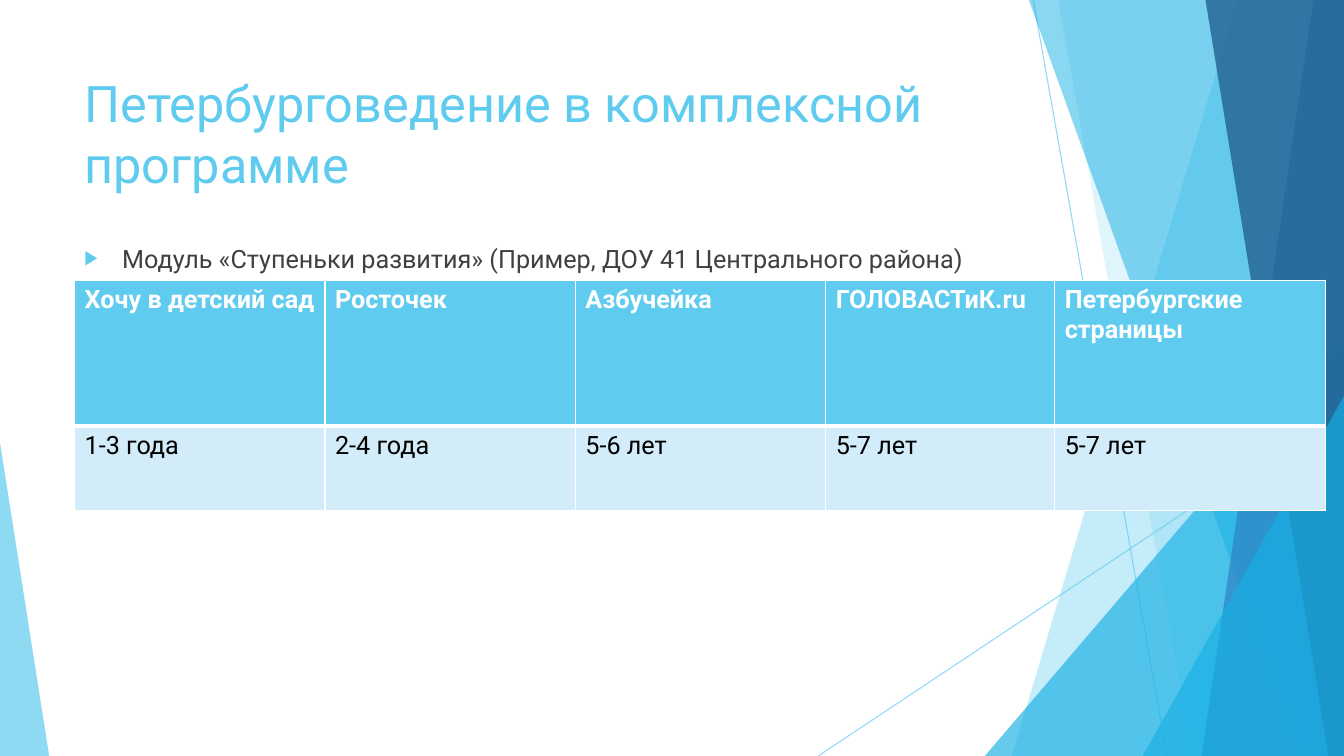
from lxml import etree
from pptx import Presentation, util as u
from pptx.dml.color import RGBColor
from pptx.enum import shapes as shp, text as txt
from pptx.oxml import ns

FONT = "Roboto"
SKY, AZURE, BLUE, NAVY = "5FCBEF", "17B0E4", "2E83C3", "226292"
WHITE, BLACK, GREY, PALE = "FFFFFF", "000000", "404040", "D2ECF9"
SLIDE_W, SLIDE_H = 33.87, 19.05

HEADING = "Петербурговедение в комплексной программе"
MODULE = "Модуль «Ступеньки развития» (Пример, ДОУ 41 Центрального района)"
PROGRAMMES = [
    ("Хочу в детский сад", "1-3 года"),
    ("Росточек", "2-4 года"),
    ("Азбучейка", "5-6 лет"),
    ("ГОЛОВАСТиК.ru", "5-7 лет"),
    ("Петербургские страницы", "5-7 лет"),
]
PROGRAMME_WIDTHS = [6.31, 6.31, 6.31, 5.77, 6.83]
ROW_HEIGHTS = [3.68, 2.13]


def colour(hex_value):
    return RGBColor.from_string(hex_value)


def sub(parent, tag, **attributes):
    return etree.SubElement(parent, ns.qn(tag), attributes)


def set_alpha(element, percent):
    for shade in element.iter(ns.qn("a:srgbClr")):
        sub(shade, "a:alpha", val=str(percent * 1000))


def add_run(paragraph, words, size, hex_value, bold=False):
    run = paragraph.add_run()
    run.text = words
    run.font.name = FONT
    run.font.size = u.Pt(size)
    run.font.bold = bold
    run.font.color.rgb = colour(hex_value)


def place(shape, left, top, width, height):
    shape.left, shape.top = u.Cm(left), u.Cm(top)
    shape.width, shape.height = u.Cm(width), u.Cm(height)


def paint(shape, hex_value, opacity):
    shape.shadow.inherit = False
    shape.fill.solid()
    shape.fill.fore_color.rgb = colour(hex_value)
    shape.line.fill.background()
    set_alpha(shape._element.spPr, opacity)


def add_ray(slide, x1, y1, x2, y2):
    ray = slide.shapes.add_connector(
        shp.MSO_CONNECTOR.STRAIGHT, u.Cm(x1), u.Cm(y1), u.Cm(x2), u.Cm(y2))
    ray.line.color.rgb = colour(SKY)
    ray.line.width = u.Pt(0.75)
    set_alpha(ray._element.spPr, 70)
    sub(ray._element.spPr, "a:effectLst")


def add_wedge(slide, left, top, width, height, apex, hex_value, opacity):
    wedge = slide.shapes.add_shape(
        shp.MSO_SHAPE.ISOSCELES_TRIANGLE,
        u.Cm(left), u.Cm(top), u.Cm(width), u.Cm(height))
    wedge.adjustments[0] = apex
    paint(wedge, hex_value, opacity)


def add_panel(slide, top_x, bottom_x, top, right, bottom, hex_value, opacity):
    corners = [(top_x, top), (right, top), (right, bottom), (bottom_x, bottom)]
    # Vertices are whole hundredths of a centimetre
    points = [(round(x * 100), round(y * 100)) for x, y in corners]
    outline = slide.shapes.build_freeform(*points[0], scale=u.Cm(0.01))
    outline.add_line_segments(points[1:], close=True)
    paint(outline.convert_to_shape(), hex_value, opacity)


def right_fan(slide, left, top, width, height):
    right, bottom = left + width, top + height

    # Thin crossing rays
    add_ray(slide, left + 5.42, top, left + 8.79, bottom)
    add_ray(slide, right, top + 10.24, left, bottom)

    def panel(top_x, bottom_x, hex_value, opacity):
        add_panel(slide, left + top_x, left + bottom_x,
                  top, right, bottom, hex_value, opacity)

    def wedge(x, y):
        add_wedge(slide, left + x, top + y, width - x, height - y, 1, AZURE, 66)

    # Translucent panels and wedges, back to front
    panel(10.57, 4.88, SKY, 36)
    panel(6.05, 9.43, SKY, 20)
    wedge(4.2, 8.46)
    panel(5.31, 12.17, AZURE, 50)
    panel(12.48, 9.66, BLUE, 70)
    panel(9.76, 12.86, NAVY, 80)
    wedge(8.18, 9.98)


def heading(slide, left, top, width, height):
    title = slide.shapes.title
    place(title, left, top, width, height)
    frame = title.text_frame
    frame.word_wrap = True
    frame.auto_size = txt.MSO_AUTO_SIZE.NONE
    frame.vertical_anchor = txt.MSO_ANCHOR.TOP
    paragraph = frame.paragraphs[0]
    paragraph.alignment = txt.PP_ALIGN.LEFT
    add_run(paragraph, HEADING, 36, SKY)


def module_bullet(slide, left, top, width, height):
    body = slide.shapes.add_textbox(
        u.Cm(left), u.Cm(top), u.Cm(width), u.Cm(height))
    body.text_frame.word_wrap = True
    paragraph = body.text_frame.paragraphs[0]
    paragraph.space_before = u.Pt(10)
    add_run(paragraph, MODULE, 18, GREY)

    # Triangular bullet with a hanging indent
    props = paragraph._p.get_or_add_pPr()
    indent = u.Cm(0.95)
    props.set("marL", str(indent))
    props.set("indent", str(-indent))
    sub(sub(props, "a:buClr"), "a:srgbClr", val=SKY)
    sub(props, "a:buSzPct", val="80000")
    sub(props, "a:buFont", typeface=FONT)
    sub(props, "a:buChar", char="▶")


def set_borders(cell, bottom_width):
    props = cell._tc.get_or_add_tcPr()
    for side, width in (("L", 1), ("R", 1), ("T", 1), ("B", bottom_width)):
        edge = sub(props, f"a:ln{side}", w=str(u.Pt(width)))
        sub(sub(edge, "a:solidFill"), "a:srgbClr", val=WHITE)


def programme_table(slide, left, top, width, height):
    table = slide.shapes.add_table(
        len(ROW_HEIGHTS), len(PROGRAMMES),
        u.Cm(left), u.Cm(top), u.Cm(width), u.Cm(height)).table
    for row, row_height in zip(table.rows, ROW_HEIGHTS):
        row.height = u.Cm(row_height)

    # Row looks: fill, text colour, bold, bottom border
    looks = [(SKY, WHITE, True, 3), (PALE, BLACK, False, 1)]
    for col, programme in enumerate(PROGRAMMES):
        table.columns[col].width = u.Cm(PROGRAMME_WIDTHS[col])
        for row, (words, look) in enumerate(zip(programme, looks)):
            fill, ink, bold, bottom_width = look
            cell = table.cell(row, col)
            set_borders(cell, bottom_width)
            cell.fill.solid()
            cell.fill.fore_color.rgb = colour(fill)
            add_run(cell.text_frame.paragraphs[0], words, 18, ink, bold)


def main():
    deck = Presentation()
    deck.slide_width, deck.slide_height = u.Cm(SLIDE_W), u.Cm(SLIDE_H)
    slide = deck.slides.add_slide(deck.slide_layouts.get_by_name("Title Only"))

    # Background decoration
    right_fan(slide, 20.62, 0, SLIDE_W - 20.62, SLIDE_H)
    add_wedge(slide, 0, 11.15, 1.24, SLIDE_H - 11.15, 0, SKY, 70)

    # Content, aligned on one left margin
    margin, text_width = 1.88, 23.88
    heading(slide, margin, 1.7, text_width, 3.66)
    module_bullet(slide, margin, 6, text_width, 10.77)
    programme_table(slide, margin, 7.06, sum(PROGRAMME_WIDTHS), sum(ROW_HEIGHTS))
    deck.save("out.pptx")


if __name__ == "__main__":
    main()
